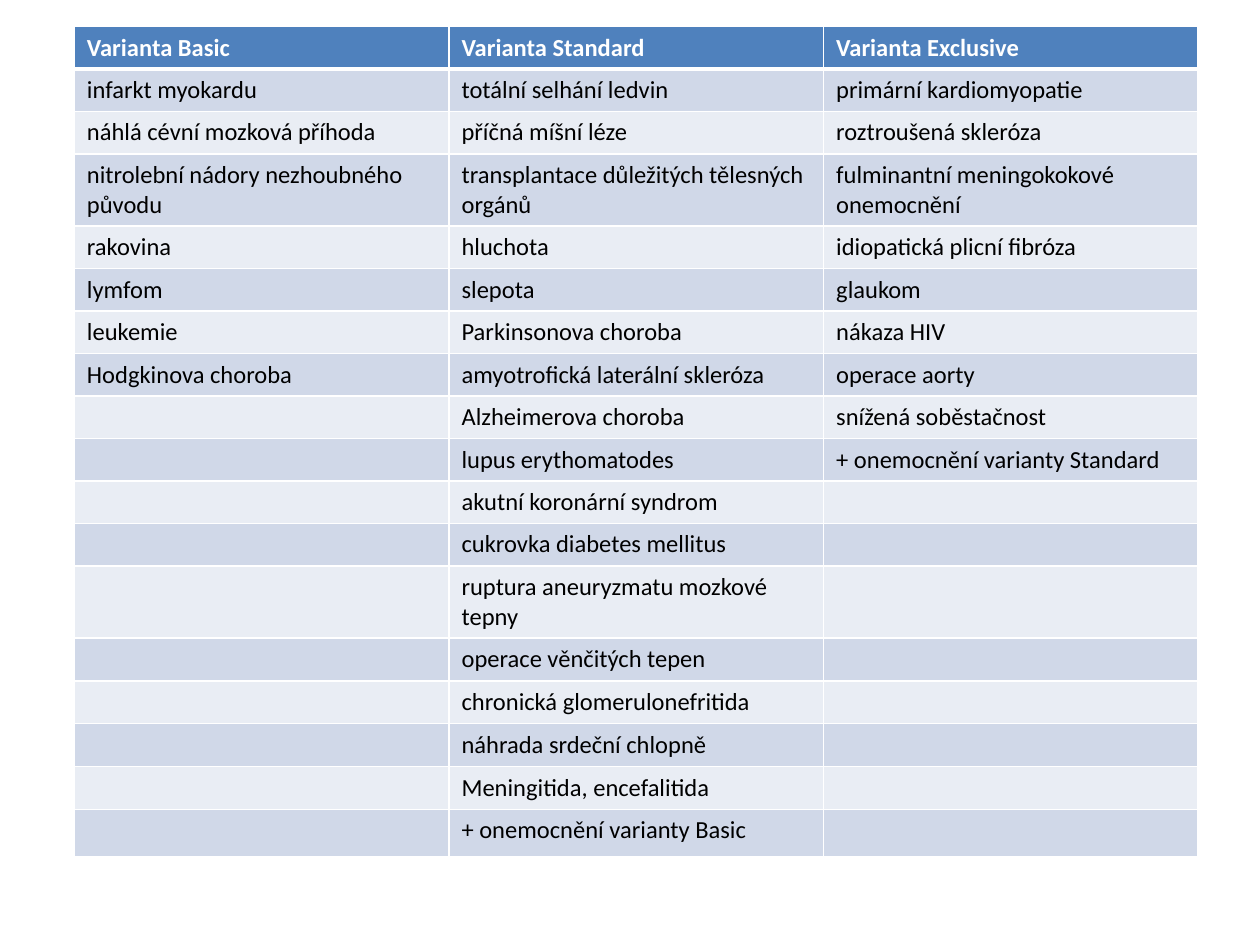
from itertools import zip_longest
from lxml.etree import SubElement
from pptx import Presentation
from pptx.dml.color import RGBColor
from pptx.oxml.ns import qn
from pptx.util import Inches, Pt

HUES = {"head": "4F81BD", "odd": "D0D8E8", "even": "E9EDF4",
        "line": "FFFFFF", "text": "000000"}
SIZE = 14
WIDE, HIGH = 10, 7.5
LOW, MID, TALL, LAST = 0.33, 0.34, 0.57, 0.38

PLANS = {
    "Varianta Basic": [
        "infarkt myokardu", "náhlá cévní mozková příhoda",
        "nitrolební nádory nezhoubného původu", "rakovina", "lymfom",
        "leukemie", "Hodgkinova choroba"],
    "Varianta Standard": [
        "totální selhání ledvin", "příčná míšní léze",
        "transplantace důležitých tělesných orgánů", "hluchota", "slepota",
        "Parkinsonova choroba", "amyotrofická laterální skleróza",
        "Alzheimerova choroba", "lupus erythomatodes",
        "akutní koronární syndrom", "cukrovka diabetes mellitus",
        "ruptura aneuryzmatu mozkové tepny", "operace věnčitých tepen",
        "chronická glomerulonefritida", "náhrada srdeční chlopně",
        "Meningitida, encefalitida", "+ onemocnění varianty Basic"],
    "Varianta Exclusive": [
        "primární kardiomyopatie", "roztroušená skleróza",
        "fulminantní meningokokové onemocnění", "idiopatická plicní fibróza",
        "glaukom", "nákaza HIV", "operace aorty", "snížená soběstačnost",
        "+ onemocnění varianty Standard"],
}
ROWS = [LOW] * 3 + [TALL] + [LOW] * 8 + [TALL] + [MID] * 4 + [LAST]


def edge(cell, row):
    """Rule the four sides of a cell, heavier below the header."""
    props = cell._tc.get_or_add_tcPr()
    widths = {"L": 1, "R": 1, "T": 3 if row == 1 else 1, "B": 1 if row else 3}
    for side, width in widths.items():
        line = SubElement(props, qn(f"a:ln{side}"), w=str(Pt(width)))
        fill = SubElement(line, qn("a:solidFill"))
        SubElement(fill, qn("a:srgbClr"), val=HUES["line"])


def write(cell, text, row):
    """Put text in a cell, or size its empty paragraph."""
    para = cell.text_frame.paragraphs[0]
    if not text:
        SubElement(para._p, qn("a:endParaRPr"), sz=str(SIZE * 100))
        return
    run = para.add_run()
    run.text = text
    style = {"name": "Calibri", "size": Pt(SIZE), "bold": row == 0}
    for key, value in style.items():
        setattr(run.font, key, value)
    hue = HUES["text" if row else "line"]
    run.font.color.rgb = RGBColor.from_string(hue)


def chart_plans(slide, left, top, width):
    """Build the table of plans in the given box."""
    lines = [tuple(PLANS), *zip_longest(*PLANS.values(), fillvalue="")]
    frame = slide.shapes.add_table(
        len(lines), len(PLANS), Inches(left), Inches(top),
        Inches(width), Inches(sum(ROWS)))
    table = frame.table
    for col in table.columns:
        col.width = Inches(width / len(PLANS))
    for row, (line, height) in enumerate(zip(lines, ROWS)):
        table.rows[row].height = Inches(height)
        band = "head" if row == 0 else "odd" if row % 2 else "even"
        for cell, text in zip(table.rows[row].cells, line):
            edge(cell, row)
            cell.fill.solid()
            cell.fill.fore_color.rgb = RGBColor.from_string(HUES[band])
            write(cell, text, row)


def main():
    """Make the slide and save it."""
    deck = Presentation()
    deck.slide_width, deck.slide_height = Inches(WIDE), Inches(HIGH)
    slide = deck.slides.add_slide(deck.slide_layouts[6])
    chart_plans(slide, 0.059 * WIDE, 0.028 * HIGH, 0.892 * WIDE)
    deck.save("out.pptx")


if __name__ == "__main__":
    main()
